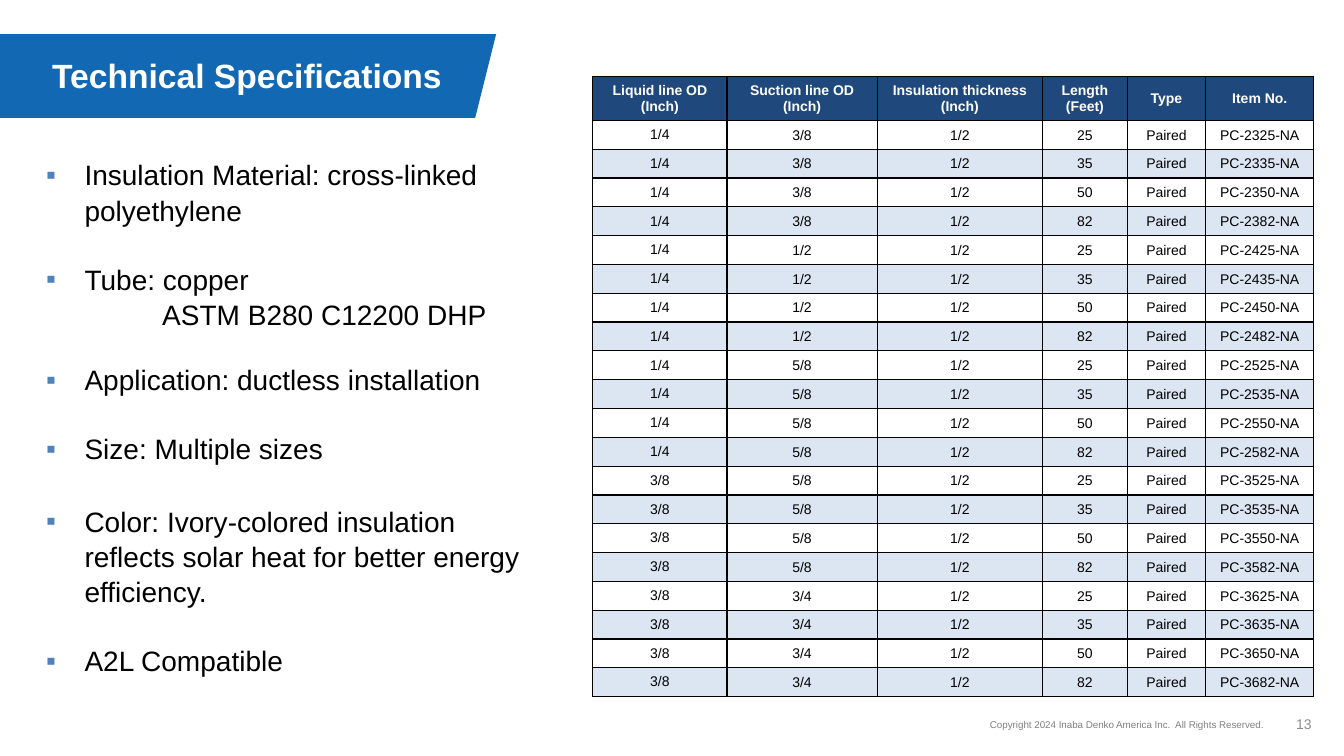
"""Build the technical specifications slide with its bullet list and size table."""
from lxml import etree
from pptx import Presentation
from pptx.dml.color import RGBColor
from pptx.enum.shapes import MSO_SHAPE
from pptx.enum.text import MSO_ANCHOR, PP_ALIGN
from pptx.oxml.ns import qn
from pptx.util import Inches, Pt

BLUE = RGBColor(0x12, 0x68, 0xB3)
NAVY = RGBColor(0x1F, 0x49, 0x7D)
PALE = RGBColor(0xDC, 0xE6, 0xF2)
WHITE = RGBColor(0xFF, 0xFF, 0xFF)
BLACK = RGBColor(0, 0, 0)
GRAY = RGBColor(0x80, 0x80, 0x80)
SILVER = RGBColor(0x8C, 0x8C, 0x8C)
ACCENT = RGBColor(0x4F, 0x81, 0xBD)


def style(para, size, color, align, bold=False):
    para.alignment = align
    para.font.name = "Arial"
    para.font.size = Pt(size)
    para.font.color.rgb = color
    para.font.bold = bold


def add_text(box, text, size, color, align, bold=False):
    shape = slide.shapes.add_textbox(*[Inches(n) for n in box])
    frame = shape.text_frame
    frame.word_wrap = True
    frame.text = text
    style(frame.paragraphs[0], size, color, align, bold)
    return frame


deck = Presentation()
deck.slide_width, deck.slide_height = Inches(13.33), Inches(7.5)
slide = deck.slides.add_slide(deck.slide_layouts[6])

add_text((9.49, 7.08, 3.14, 0.22),
         "Copyright 2024 Inaba Denko America Inc.  All Rights Reserved.",
         7, GRAY, PP_ALIGN.RIGHT)
number = add_text((12.55, 6.98, 0.58, 0.4), "13", 10, SILVER, PP_ALIGN.RIGHT)
number.vertical_anchor = MSO_ANCHOR.MIDDLE
number.margin_left = number.margin_right = Inches(0.12)
number.margin_top = number.margin_bottom = Inches(0.06)

banner = slide.shapes.add_shape(MSO_SHAPE.PARALLELOGRAM, Inches(-1.17),
                                Inches(0.34), Inches(6.09), Inches(0.83))
banner.shadow.inherit = False
banner.fill.solid()
banner.fill.fore_color.rgb = BLUE
banner.line.fill.background()
add_text((0.36, 0.5, 4.18, 0.5), "Technical Specifications", 24, WHITE,
         PP_ALIGN.CENTER, True)

SIZES = {2: "1/4", 3: "3/8", 4: "1/2", 5: "5/8", 6: "3/4"}
PAIRS = [(2, 3), (2, 4), (2, 5), (3, 5), (3, 6)]
rows = [["Liquid line OD (Inch)", "Suction line OD (Inch)",
         "Insulation thickness (Inch)", "Length\n(Feet)", "Type", "Item No."]]
for liquid, suction in PAIRS:
    for length in (25, 35, 50, 82):
        rows.append([SIZES[liquid], SIZES[suction], "1/2", str(length),
                     "Paired", f"PC-{liquid}{suction}{length}-NA"])

WIDTHS = [1.33, 1.49, 1.64, 0.84, 0.78, 1.07]
HEAD = 0.43
HEIGHT = 6.15
table = slide.shapes.add_table(len(rows), len(WIDTHS), Inches(5.88), Inches(0.76),
                               Inches(sum(WIDTHS)), Inches(HEIGHT)).table
for column, width in zip(table.columns, WIDTHS):
    column.width = Inches(width)
for r, row in enumerate(rows):
    table.rows[r].height = Inches((HEIGHT - HEAD) / (len(rows) - 1) if r else HEAD)
    for c, text in enumerate(row):
        cell = table.cell(r, c)
        cell.text = text
        cell.vertical_anchor = MSO_ANCHOR.MIDDLE
        if r and c:
            cell.margin_left = cell.margin_right = cell.margin_top = Inches(0.01)
            cell.margin_bottom = 0
        for para in cell.text_frame.paragraphs:
            style(para, 10, BLACK if r else WHITE, PP_ALIGN.CENTER, r == 0)
        props = cell._tc.get_or_add_tcPr()
        for side in ("a:lnL", "a:lnR", "a:lnT", "a:lnB"):
            line = etree.SubElement(props, qn(side), w=str(Pt(1)))
            fill = etree.SubElement(line, qn("a:solidFill"))
            etree.SubElement(fill, qn("a:srgbClr"), val=str(BLACK))
        cell.fill.solid()
        cell.fill.fore_color.rgb = NAVY if r == 0 else WHITE if r % 2 else PALE

POINTS = [
    ("Insulation Material: cross-linked polyethylene", 0, True),
    ("Tube: copper", 24, True),
    ("ASTM B280 C12200 DHP", 0, False),
    ("Application: ductless installation", 21.7, True),
    ("Size: Multiple sizes", 24, True),
    ("Color: Ivory-colored insulation reflects solar heat for better energy "
     "efficiency.", 26.5, True),
    ("A2L Compatible", 24, True),
]
body = add_text((0.36, 1.5, 4.92, 5.82), POINTS[0][0], 20, BLACK, PP_ALIGN.LEFT)
for i, (text, gap, mark) in enumerate(POINTS):
    para = body.add_paragraph() if i else body.paragraphs[0]
    para.text = text
    para.line_spacing = 1.05
    if gap:
        para.space_before = Pt(gap)
    props = para._p.get_or_add_pPr()
    props.set("marL", str(Inches(0.38 if mark else 1.15)))
    if mark:
        props.set("indent", str(Inches(-0.38)))
        tint = etree.SubElement(props, qn("a:buClr"))
        etree.SubElement(tint, qn("a:srgbClr"), val=str(ACCENT))
        etree.SubElement(props, qn("a:buFont"), typeface="Arial")
        etree.SubElement(props, qn("a:buChar"), char="▪")
        for run in props.findall(qn("a:defRPr")):
            props.append(run)
    style(para, 20, BLACK, PP_ALIGN.LEFT)

deck.save("out.pptx")
